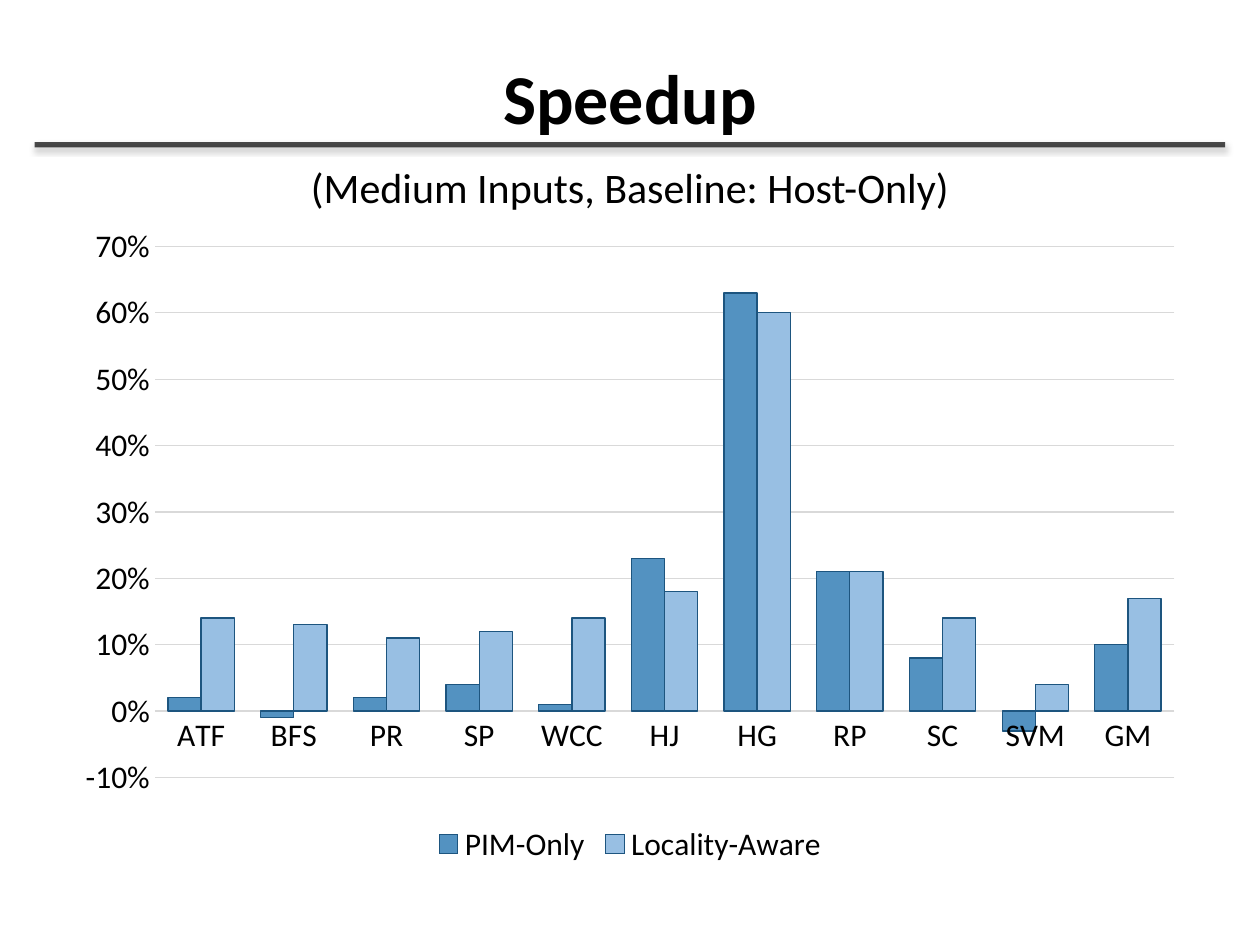
from collections import namedtuple

from lxml import etree
from pptx import Presentation
from pptx.chart.data import CategoryChartData
from pptx.dml.color import RGBColor
from pptx.enum import chart as charts, shapes, text
from pptx.oxml import ns
from pptx.util import Cm, Pt

BLACK = RGBColor(0x00, 0x00, 0x00)
GRID = RGBColor(0xD9, 0xD9, 0xD9)
BAR_EDGE = RGBColor(0x1D, 0x55, 0x7F)
PIM_BLUE = RGBColor(0x53, 0x92, 0xC1)
LOCALITY_BLUE = RGBColor(0x98, 0xBF, 0xE3)
FONT = "Calibri"

Box = namedtuple("Box", "left top width height")

BENCHMARKS = ["ATF", "BFS", "PR", "SP", "WCC", "HJ", "HG", "RP", "SC", "SVM", "GM"]
SPEEDUPS = [
    ("PIM-Only", PIM_BLUE,
     [0.02, -0.01, 0.02, 0.04, 0.01, 0.23, 0.63, 0.21, 0.08, -0.03, 0.1]),
    ("Locality-Aware", LOCALITY_BLUE,
     [0.14, 0.13, 0.11, 0.12, 0.14, 0.18, 0.6, 0.21, 0.14, 0.04, 0.17]),
]


def style_font(font, size, bold=False):
    font.name, font.size, font.bold = FONT, Pt(size), bold
    font.color.rgb = BLACK


def style_line(line, color, width=0.75):
    line.color.rgb = color
    line.width = Pt(width)


def add_rule(slide, box):
    """Draw the translucent, shadowed rule along the top of the box."""
    rule = slide.shapes.add_connector(
        shapes.MSO_CONNECTOR.STRAIGHT,
        box.left, box.top, box.left + box.width, box.top)
    style_line(rule.line, BLACK, 3)
    properties = rule._element.spPr
    color = properties.find(".//" + ns.qn("a:srgbClr"))
    etree.SubElement(color, ns.qn("a:alpha"), val="70000")

    effects = etree.SubElement(properties, ns.qn("a:effectLst"))
    shadow = etree.SubElement(
        effects, ns.qn("a:outerShdw"), blurRad=str(Pt(3.1)), dist=str(Pt(1.8)),
        dir="5400000", rotWithShape="0")
    shade = etree.SubElement(shadow, ns.qn("a:srgbClr"), val=str(BLACK))
    etree.SubElement(shade, ns.qn("a:alpha"), val="35000")


def add_heading(slide, box):
    """Place the title with the rule reaching past its lower edge."""
    title = slide.shapes.title
    title.left, title.top, title.width, title.height = box
    title.text_frame.text = "Speedup"
    title.text_frame.vertical_anchor = text.MSO_ANCHOR.BOTTOM
    heading = title.text_frame.paragraphs[0]
    heading.alignment = text.PP_ALIGN.CENTER
    style_font(heading.font, 40, bold=True)

    overhang = Cm(0.57)
    add_rule(slide, Box(box.left - overhang, box.top + box.height,
                        box.width + 2 * overhang, 0))


def add_subtitle(slide, box):
    frame = slide.shapes.add_textbox(*box).text_frame
    frame.word_wrap = False
    frame.auto_size = text.MSO_AUTO_SIZE.SHAPE_TO_FIT_TEXT
    frame.vertical_anchor = text.MSO_ANCHOR.MIDDLE
    frame.text = "(Medium Inputs, Baseline: Host-Only)"
    setting = frame.paragraphs[0]
    setting.alignment = text.PP_ALIGN.CENTER
    style_font(setting.font, 24)


def add_speedup_chart(slide, box):
    data = CategoryChartData(number_format="0%")
    data.categories = BENCHMARKS
    for name, _, values in SPEEDUPS:
        data.add_series(name, values)
    chart = slide.shapes.add_chart(
        charts.XL_CHART_TYPE.COLUMN_CLUSTERED, *box, data).chart
    style_font(chart.font, 18)
    chart.has_title = False
    chart.has_legend = True
    chart.legend.position = charts.XL_LEGEND_POSITION.BOTTOM
    chart.legend.include_in_layout = False
    style_font(chart.legend.font, 18)

    plot = chart.plots[0]
    plot.gap_width, plot.overlap = 80, 0
    plot.vary_by_categories = False
    for series, (_, color, _) in zip(plot.series, SPEEDUPS):
        series.invert_if_negative = False
        series.format.fill.solid()
        series.format.fill.fore_color.rgb = color
        style_line(series.format.line, BAR_EDGE)

    benchmarks, speedup = chart.category_axis, chart.value_axis
    for axis in (benchmarks, speedup):
        axis.major_tick_mark = axis.minor_tick_mark = charts.XL_TICK_MARK.NONE
        style_font(axis.tick_labels.font, 18)
    style_line(benchmarks.format.line, GRID)
    speedup.minimum_scale, speedup.maximum_scale = -0.1, 0.7
    speedup.major_unit = 0.1
    speedup.tick_labels.number_format = "0%"
    speedup.tick_labels.number_format_is_linked = False
    speedup.format.line.fill.background()
    speedup.has_major_gridlines = True
    style_line(speedup.major_gridlines.format.line, GRID)


def main():
    deck = Presentation()
    deck.slide_width, deck.slide_height = Cm(25.4), Cm(19.05)
    slide = deck.slides.add_slide(deck.slide_layouts.get_by_name("Title Only"))
    add_heading(slide, Box(Cm(1.27), Cm(0.76), Cm(22.86), Cm(2.16)))
    add_speedup_chart(slide, Box(Cm(1.27), Cm(4.32), Cm(22.86), Cm(13.21)))
    add_subtitle(slide, Box(Cm(5.94), Cm(3.12), Cm(13.52), Cm(1.27)))
    deck.save("out.pptx")


if __name__ == "__main__":
    main()
